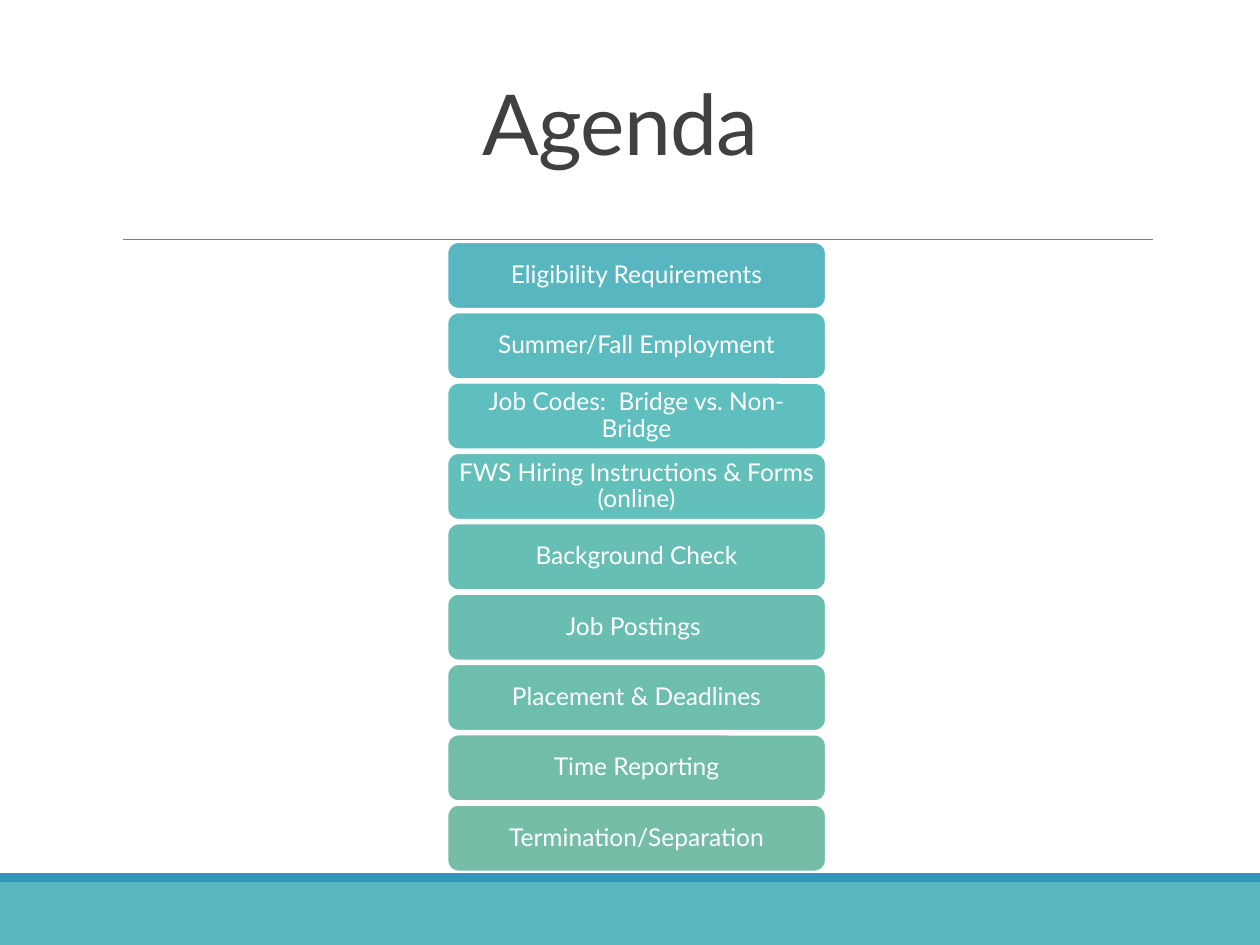
from pptx import Presentation
from pptx.dml.color import RGBColor
from pptx.enum.shapes import MSO_CONNECTOR, MSO_SHAPE
from pptx.enum.text import MSO_ANCHOR, PP_ALIGN
from pptx.oxml.ns import qn
from pptx.util import Pt
from lxml.etree import SubElement

FONT = "Lato"
TITLE = "Agenda "
AGENDA = [
    ("Eligibility Requirements", "58B6C0"),
    ("Summer/Fall Employment", "5CBBBF"),
    ("Job Codes:\u00a0 Bridge vs. Non-Bridge", "5FBFBF"),
    ("FWS Hiring Instructions & Forms (online)", "63BFBA"),
    ("Background Check", "67BEB5"),
    ("Job Postings\u00a0", "6ABEB1"),
    ("Placement & Deadlines", "6EBEAD"),
    ("Time Reporting", "72BDAA"),
    ("Termination/Separation", "75BDA7"),
]
FOOTER_BANDS = [(504, 36, "58B6C0"), (499, 5, "3494BA")]  # top, height, fill

SLIDE_WIDTH, SLIDE_HEIGHT = 720, 540
ITEM_LEFT, ITEM_TOP = 255.6, 138.3
ITEM_WIDTH, ITEM_HEIGHT, ITEM_PITCH = 216.4, 38.2, 40.2


def color(value):
    return RGBColor.from_string(value)


def add_block(slide, kind, left, top, width, height, fill):
    shape = slide.shapes.add_shape(kind, Pt(left), Pt(top), Pt(width), Pt(height))
    shape.shadow.inherit = False
    shape.fill.solid()
    shape.fill.fore_color.rgb = color(fill)
    shape.line.fill.background()
    return shape


def set_text(shape, text, size, text_color, anchor, line_spacing):
    frame = shape.text_frame
    frame.word_wrap = True
    frame.vertical_anchor = anchor
    paragraph = frame.paragraphs[0]
    paragraph.text = text
    paragraph.alignment = PP_ALIGN.CENTER
    paragraph.line_spacing = line_spacing
    paragraph.font.name = FONT
    paragraph.font.size = Pt(size)
    paragraph.font.color.rgb = color(text_color)
    return frame


def add_title(slide):
    title = slide.shapes.add_textbox(Pt(63.4), Pt(-12.2), Pt(594), Pt(114.5))
    frame = set_text(title, TITLE, 48, "404040", MSO_ANCHOR.BOTTOM, 0.85)
    run = frame.paragraphs[0].runs[0]
    run.font._element.set("spc", "-50")


def add_rule(slide):
    rule = slide.shapes.add_connector(
        MSO_CONNECTOR.STRAIGHT, Pt(70.4), Pt(136.8), Pt(659), Pt(136.8))
    rule.line.color.rgb = color("808080")
    rule.line.width = Pt(0.5)
    SubElement(rule._element.spPr, qn("a:effectLst"))


def add_agenda(slide):
    for index, (text, fill) in enumerate(AGENDA):
        item = add_block(slide, MSO_SHAPE.ROUNDED_RECTANGLE, ITEM_LEFT,
                         ITEM_TOP + index * ITEM_PITCH, ITEM_WIDTH, ITEM_HEIGHT, fill)
        item.line.color.rgb = color("FFFFFF")
        item.line.width = Pt(1.25)
        frame = set_text(item, text, 14, "FFFFFF", MSO_ANCHOR.MIDDLE, 0.9)
        frame.margin_left = frame.margin_right = Pt(4.2)
        frame.margin_top = frame.margin_bottom = Pt(2.1)


def main():
    presentation = Presentation()
    presentation.slide_width, presentation.slide_height = Pt(SLIDE_WIDTH), Pt(SLIDE_HEIGHT)
    slide = presentation.slides.add_slide(presentation.slide_layouts[6])
    for top, height, fill in FOOTER_BANDS:
        add_block(slide, MSO_SHAPE.RECTANGLE, 0, top, SLIDE_WIDTH, height, fill)
    add_rule(slide)
    add_title(slide)
    add_agenda(slide)
    presentation.save("out.pptx")


if __name__ == "__main__":
    main()
